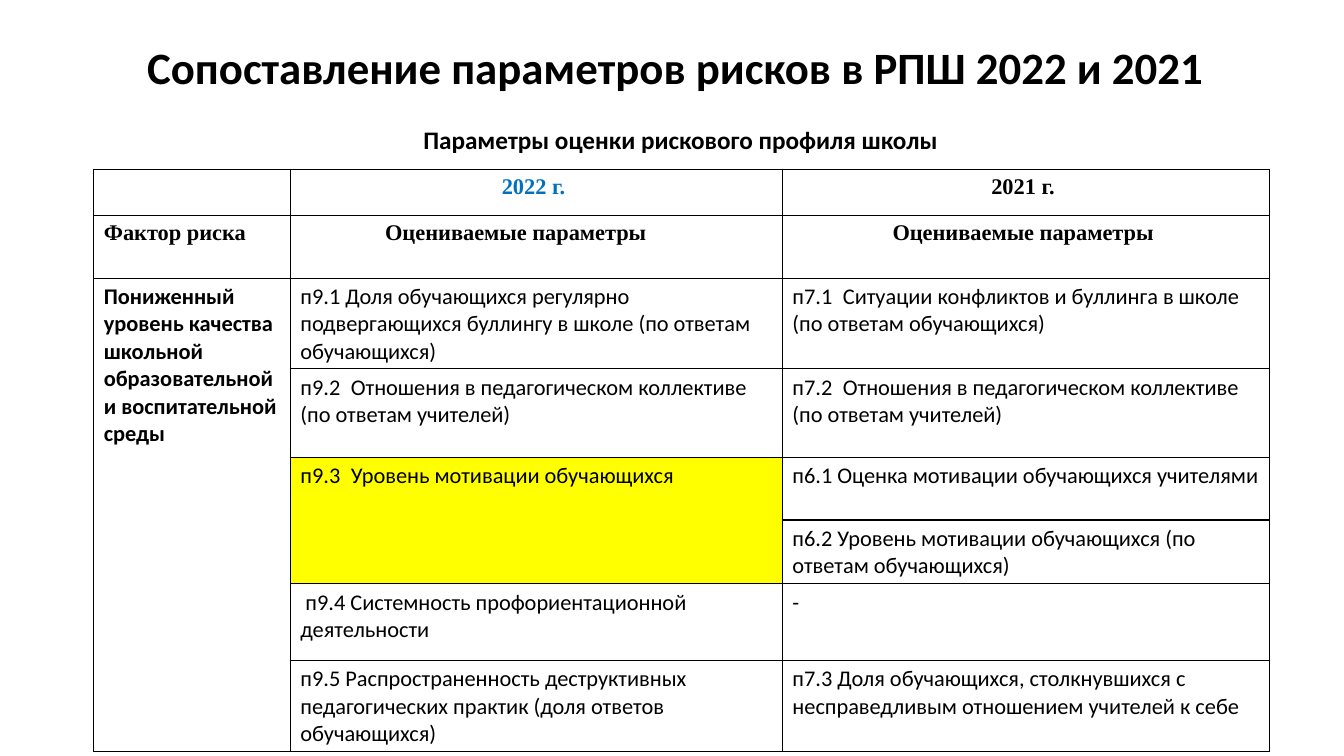
from lxml import etree
from pptx import Presentation
from pptx.dml.color import RGBColor
from pptx.enum.text import MSO_ANCHOR, PP_ALIGN
from pptx.oxml import parse_xml
from pptx.oxml.ns import nsdecls
from pptx.util import Inches, Pt

COLORS = {"black": "000000", "blue": "0070C0", "yellow": "FFFF00"}
SANS, SERIF = "Calibri", "Times New Roman"
HEADER_ROWS = 2
COLUMN_WIDTHS = [1.95, 4.88, 4.83]
ROW_HEIGHTS = [0.46, 0.62, 0.88, 0.88, 0.62, 0.62, 0.76, 0.88]
MERGES = [((2, 0), (7, 0)), ((4, 1), (5, 1))]
ROWS = [
    ["", "2022 г. ", "2021 г. "],
    ["Фактор риска", "Оцениваемые параметры \t", "Оцениваемые параметры "],
    ["Пониженный уровень качества школьной образовательной и воспитательной среды",
     "п9.1 Доля обучающихся регулярно подвергающихся буллингу в школе (по ответам обучающихся)",
     "п7.1 \tСитуации конфликтов и буллинга в школе (по ответам обучающихся)"],
    ["", "п9.2 \tОтношения в педагогическом коллективе (по ответам учителей)",
     "п7.2 \tОтношения в педагогическом коллективе (по ответам учителей)"],
    ["", "п9.3 \tУровень мотивации обучающихся",
     "п6.1 Оценка мотивации обучающихся учителями"],
    ["", "", "п6.2 Уровень мотивации обучающихся (по ответам обучающихся)"],
    ["", " п9.4 Системность профориентационной деятельности", "-"],
    ["", "п9.5 Распространенность деструктивных педагогических практик (доля ответов обучающихся)",
     "п7.3 Доля обучающихся, столкнувшихся с несправедливым отношением учителей к себе"],
]


def write(text_frame, text, size, font=SANS, bold=True, color="black", align=PP_ALIGN.LEFT):
    text_frame.text = text
    paragraph = text_frame.paragraphs[0]
    paragraph.alignment = align
    paragraph.font.name = font
    paragraph.font.size = Pt(size)
    paragraph.font.bold = bold
    paragraph.font.color.rgb = RGBColor.from_string(COLORS[color])
    return paragraph


def add_title(slide, text):
    title = slide.shapes.title
    title.left, title.top = Inches(1.36), Inches(0.32)
    title.width, title.height = Inches(11.32), Inches(0.75)
    title.text_frame.vertical_anchor = MSO_ANCHOR.MIDDLE
    write(title.text_frame, text, 32).line_spacing = 0.9


def add_subtitle(slide, text):
    box = slide.shapes.add_textbox(Inches(4.1), Inches(1.18), Inches(5.56), Inches(0.4))
    box.text_frame.word_wrap = True
    write(box.text_frame, text, 18)


def set_borders(cell, width=Pt(1)):
    properties = cell._tc.get_or_add_tcPr()
    for index, side in enumerate(("lnL", "lnR", "lnT", "lnB")):
        properties.insert(index, parse_xml(
            f'<a:{side} {nsdecls("a")} w="{int(width)}"><a:solidFill>'
            f'<a:srgbClr val="{COLORS["black"]}"/></a:solidFill></a:{side}>'))


def fill_cell(cell, row, column, text):
    is_header = row < HEADER_ROWS
    write(cell.text_frame, text, 16,
          font=SERIF if is_header else SANS,
          bold=is_header or column == 0,
          color="blue" if (row, column) == (0, 1) else "black",
          align=PP_ALIGN.CENTER if is_header and column else PP_ALIGN.LEFT)
    if column == 1 and row in (4, 5):
        cell.fill.solid()
        cell.fill.fore_color.rgb = RGBColor.from_string(COLORS["yellow"])
    else:
        cell.fill.background()
    set_borders(cell)


def add_risk_table(slide):
    table = slide.shapes.add_table(
        len(ROWS), len(COLUMN_WIDTHS), Inches(0.93), Inches(1.68),
        Inches(sum(COLUMN_WIDTHS)), Inches(sum(ROW_HEIGHTS))).table
    table.first_row = table.horz_banding = False
    for column, width in zip(table.columns, COLUMN_WIDTHS):
        column.width = Inches(width)
    for row, height in zip(table.rows, ROW_HEIGHTS):
        row.height = Inches(height)
    for row, texts in enumerate(ROWS):
        for column, text in enumerate(texts):
            fill_cell(table.cell(row, column), row, column, text)
    for first, last in MERGES:
        table.cell(*first).merge(table.cell(*last))


def main():
    presentation = Presentation()
    presentation.slide_width, presentation.slide_height = Inches(13.33), Inches(7.5)
    slide = presentation.slides.add_slide(presentation.slide_layouts[5])
    add_title(slide, "Сопоставление параметров рисков в РПШ 2022 и 2021")
    add_subtitle(slide, "Параметры оценки рискового профиля школы")
    add_risk_table(slide)
    presentation.save("out.pptx")


if __name__ == "__main__":
    main()
